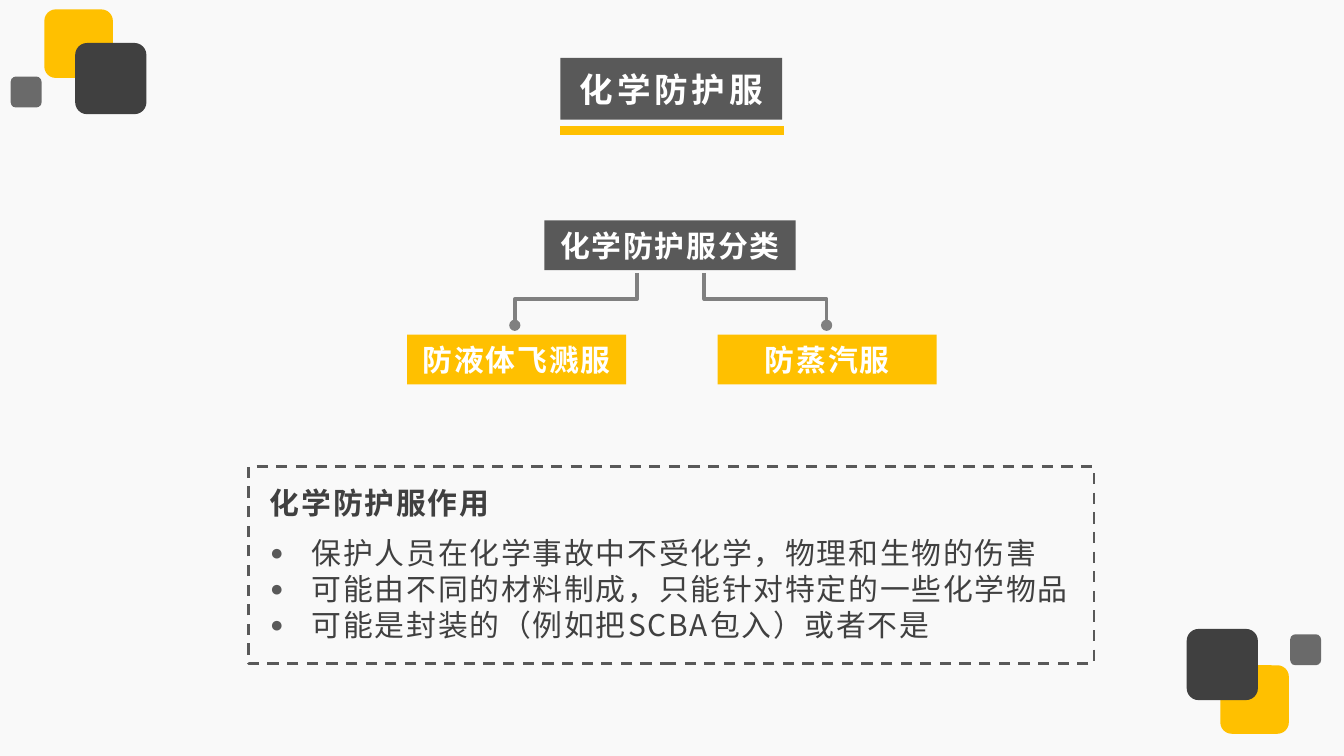
from pptx import Presentation
from pptx import util as u
from pptx.dml.color import RGBColor
from pptx.enum import dml, shapes, text
from pptx.oxml.ns import qn
from lxml import etree

FONT = "Noto Sans CJK SC"
COLORS = {
    "background": "F9F9F9",
    "yellow": "FFC000",
    "dark": "404040",
    "panel": "595959",
    "branch": "808080",
    "white": "FFFFFF",
}
USES = [
    "保护人员在化学事故中不受化学，物理和生物的伤害",
    "可能由不同的材料制成，只能针对特定的一些化学物品",
    "可能是封装的（例如把SCBA包入）或者不是",
]


def color(name):
    return RGBColor.from_string(COLORS[name])


def sub(parent, tag, **attributes):
    return etree.SubElement(parent, qn(tag), attributes)


def place(part, left, top, width, height):
    part.left, part.top = u.Inches(left), u.Inches(top)
    part.width, part.height = u.Inches(width), u.Inches(height)


def write(part, words, ink, size=16, spacing=1, bold=True,
          align=text.PP_ALIGN.CENTER, anchor=text.MSO_ANCHOR.MIDDLE,
          inset=(0.1, 0.05), wrap=False):
    frame = part.text_frame
    frame.text = words
    frame.word_wrap = wrap
    frame.auto_size = text.MSO_AUTO_SIZE.NONE
    frame.vertical_anchor = anchor
    frame.margin_left = frame.margin_right = u.Inches(inset[0])
    frame.margin_top = frame.margin_bottom = u.Inches(inset[1])
    for paragraph in frame.paragraphs:
        paragraph.alignment = align
        paragraph.space_before = u.Pt(0)
        paragraph.line_spacing = u.Pt(size * 1.2)
        for run in paragraph.runs:
            run.font.size, run.font.bold, run.font.name = u.Pt(size), bold, FONT
            run.font.color.rgb = color(ink)
            properties = run.font._element
            properties.set("spc", str(spacing * 100))
            sub(properties, "a:ea", typeface=FONT)


def add_block(slide, kind, left, top, width, height, fill=None):
    block = slide.shapes.add_shape(
        kind, u.Inches(left), u.Inches(top), u.Inches(width), u.Inches(height))
    block.shadow.inherit = False
    block.line.fill.background()
    if fill:
        block.fill.solid()
        block.fill.fore_color.rgb = color(fill)
    else:
        block.fill.background()
    return block


def add_squares(slide, squares):
    for left, top, side, fill, opacity in squares:
        square = add_block(slide, shapes.MSO_SHAPE.ROUNDED_RECTANGLE,
                           left, top, side, side, fill)
        if opacity < 100:
            tint = square._element.spPr.find(qn("a:solidFill"))[0]
            sub(tint, "a:alpha", val=str(opacity * 1000))


def add_label(slide, words, left, top, width, fill):
    label = add_block(slide, shapes.MSO_SHAPE.RECTANGLE, left, top, width, 0.37, fill)
    write(label, words, "white")


def add_line(slide, kind, start, end, ink, weight):
    line = slide.shapes.add_connector(kind, *map(u.Inches, (*start, *end)))
    line.line.color.rgb = color(ink)
    line.line.width = u.Pt(weight)
    sub(line._element.spPr, "a:effectLst")
    return line


def add_branch(slide, start, end):
    # The elbow is laid out sideways, then turned so it leaves downwards
    (x1, y1), (x2, y2) = start, end
    middle_x, middle_y = (x1 + x2) / 2, (y1 + y2) / 2
    half_drop, half_reach = (y2 - y1) / 2, abs(x2 - x1) / 2
    side = 1 if x2 < x1 else -1
    branch = add_line(
        slide, shapes.MSO_CONNECTOR.ELBOW,
        (middle_x - side * half_drop, middle_y - half_reach),
        (middle_x + side * half_drop, middle_y + half_reach), "branch", 2)
    properties = branch._element.spPr
    properties.find(qn("a:xfrm")).set("rot", str((90 if side > 0 else 270) * 60000))
    sub(properties.find(qn("a:ln")), "a:tailEnd", type="oval")


def add_bullets(frame):
    for paragraph in frame.paragraphs:
        properties = paragraph._p.get_or_add_pPr()
        properties.set("marL", str(u.Inches(0.31)))
        properties.set("indent", str(-u.Inches(0.31)))
        sub(sub(properties, "a:buClr"), "a:srgbClr", val=COLORS["panel"])
        sub(properties, "a:buSzPct", val="75000")
        sub(properties, "a:buFont", typeface="Arial")
        sub(properties, "a:buChar", char="●")


def main():
    deck = Presentation()
    deck.slide_width, deck.slide_height = u.Inches(10), u.Inches(10 * 9 / 16)
    slide = deck.slides.add_slide(deck.slide_layouts[1])
    slide.background.fill.solid()
    slide.background.fill.fore_color.rgb = color("background")

    # Corner squares
    add_squares(slide, [
        (0.33, 0.07, 0.51, "yellow", 100),
        (0.56, 0.32, 0.53, "dark", 100),
        (0.08, 0.57, 0.23, "dark", 77),
        (9.08, 4.95, 0.51, "yellow", 100),
        (8.83, 4.68, 0.53, "dark", 100),
        (9.6, 4.72, 0.23, "dark", 77),
    ])

    # Title with underline
    title = slide.shapes.title
    place(title, 4.17, 0.43, 1.65, 0.46)
    title.fill.solid()
    title.fill.fore_color.rgb = color("panel")
    write(title, "化学防护服", "white", size=18, spacing=2, inset=(0.12, 0.08), wrap=True)
    add_line(slide, shapes.MSO_CONNECTOR.STRAIGHT, (4.17, 0.97), (5.83, 0.97), "yellow", 5)

    # Classification tree
    add_label(slide, "化学防护服分类", 4.05, 1.64, 1.87, "panel")
    add_label(slide, "防液体飞溅服", 3.03, 2.49, 1.63, "yellow")
    add_label(slide, "防蒸汽服", 5.34, 2.49, 1.63, "yellow")
    add_branch(slide, (4.74, 2.03), (3.83, 2.42))
    add_branch(slide, (5.24, 2.03), (6.15, 2.42))

    # Uses in a dashed frame
    dashed_frame = add_block(slide, shapes.MSO_SHAPE.RECTANGLE, 1.85, 3.47, 6.29, 1.47)
    dashed_frame.line.color.rgb = color("panel")
    dashed_frame.line.width = u.Pt(1.5)
    dashed_frame.line.dash_style = dml.MSO_LINE.DASH
    left_top = {"align": text.PP_ALIGN.JUSTIFY, "anchor": text.MSO_ANCHOR.TOP}
    heading = slide.shapes.add_textbox(*map(u.Inches, (1.91, 3.56, 1.87, 0.37)))
    write(heading, "化学防护服作用", "dark", **left_top)
    uses = slide.placeholders[1]
    place(uses, 1.91, 3.93, 6.24, 0.91)
    write(uses, "\n".join(USES), "dark", bold=False, **left_top)
    add_bullets(uses.text_frame)

    deck.save("out.pptx")


if __name__ == "__main__":
    main()
